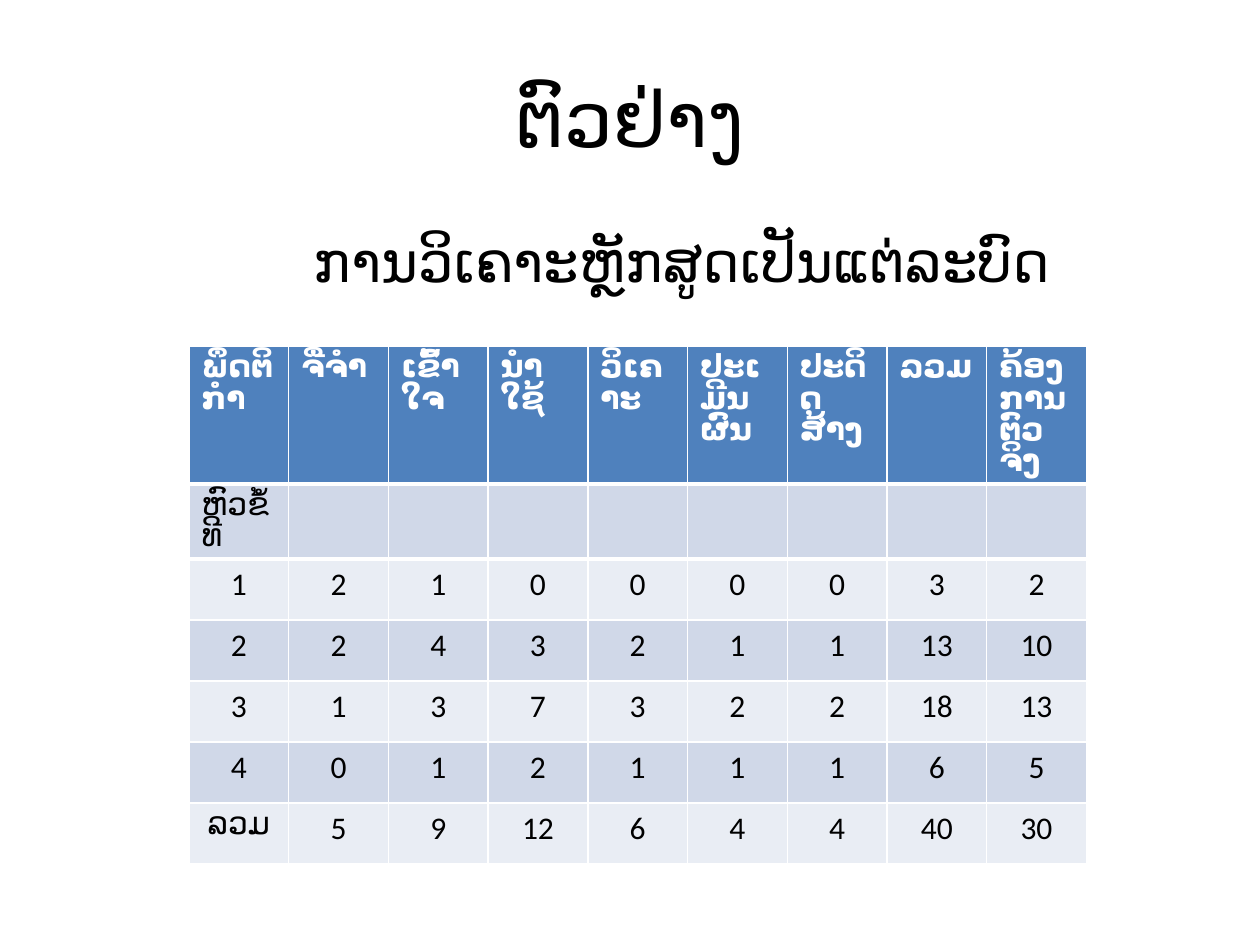
"""Build a Lao slide with a table that analyses the curriculum by chapter."""
from lxml import etree
from pptx import Presentation
from pptx.dml.color import RGBColor
from pptx.enum.text import MSO_ANCHOR, PP_ALIGN
from pptx.oxml.ns import qn
from pptx.util import Cm, Pt

LEFT, CENTER = PP_ALIGN.LEFT, PP_ALIGN.CENTER
TOP, MIDDLE = MSO_ANCHOR.TOP, MSO_ANCHOR.MIDDLE
BLACK = RGBColor(0x00, 0x00, 0x00)
WHITE = RGBColor(0xFF, 0xFF, 0xFF)
BLUE = RGBColor(0x4F, 0x81, 0xBD)
BANDS = RGBColor(0xE9, 0xED, 0xF4), RGBColor(0xD0, 0xD8, 0xE8)
FONT = "Calibri"

ROWS = [
    ["ພຶດຕິກຳ", "ຈື່ຈຳ", "ເຂົ້າໃຈ", "ນຳໃຊ້", "ວິເຄາະ", "ປະເມີນຜົນ",
     "ປະດິດສ້າງ", "ລວມ", "ຄ້ອງການຕົວຈິງ"],
    ["ຫົວຂໍ້ທີ"] + [""] * 8,
    [1, 2, 1, 0, 0, 0, 0, 3, 2],
    [2, 2, 4, 3, 2, 1, 1, 13, 10],
    [3, 1, 3, 7, 3, 2, 2, 18, 13],
    [4, 0, 1, 2, 1, 1, 1, 6, 5],
    ["ລວມ", 5, 9, 12, 6, 4, 4, 40, 30],
]


def write(frame, text, size, color=BLACK, bold=False, align=LEFT):
    frame.text = text
    para = frame.paragraphs[0]
    para.alignment = align
    for run in para.runs:
        font = run.font
        font.name, font.size, font.bold = FONT, Pt(size), bold
        font.color.rgb = color


def add_text(slide, text, size, top, height, anchor=TOP, align=LEFT, inset=0.25):
    box = slide.shapes.add_textbox(Cm(1.27), Cm(top), Cm(22.86), Cm(height))
    frame = box.text_frame
    frame.word_wrap = True
    frame.vertical_anchor = anchor
    frame.margin_left = Cm(inset)
    write(frame, text, size, align=align)


def add_edge(cell, side, width):
    line = etree.Element(qn("a:" + side), w=str(Pt(width)))
    fill = etree.SubElement(line, qn("a:solidFill"))
    etree.SubElement(fill, qn("a:srgbClr"), val=str(WHITE))
    cell._tc.get_or_add_tcPr().insert(0, line)


def add_grid(slide, rows):
    shape = slide.shapes.add_table(len(rows), len(rows[0]),
                                   Cm(3.81), Cm(6.99), Cm(18.09), Cm(8.61))
    table = shape.table
    for r, row in enumerate(rows):
        head = r == 0
        fill = BLUE if head else BANDS[r % 2]
        for c, value in enumerate(row):
            cell = table.cell(r, c)
            cell.fill.solid()
            cell.fill.fore_color.rgb = fill
            write(cell.text_frame, str(value), 18, WHITE if head else BLACK,
                  head, CENTER if r > 1 else LEFT)
            if r < 2:
                cell.text_frame.paragraphs[0].line_spacing = Pt(17.8)
                add_edge(cell, "lnB" if head else "lnT", 3)


def main():
    deck = Presentation()
    deck.slide_width, deck.slide_height = Cm(25.4), Cm(19.05)
    slide = deck.slides.add_slide(deck.slide_layouts[6])
    add_text(slide, "ຕົວຢ່າງ", 44, 0.76, 3.18, MIDDLE, CENTER)
    add_text(slide, "ການວິເຄາະຫຼັກສູດເປັນແຕ່ລະບົດ", 32, 4.45, 12.57, inset=5.06)
    add_grid(slide, ROWS)
    deck.save("out.pptx")


if __name__ == "__main__":
    main()
